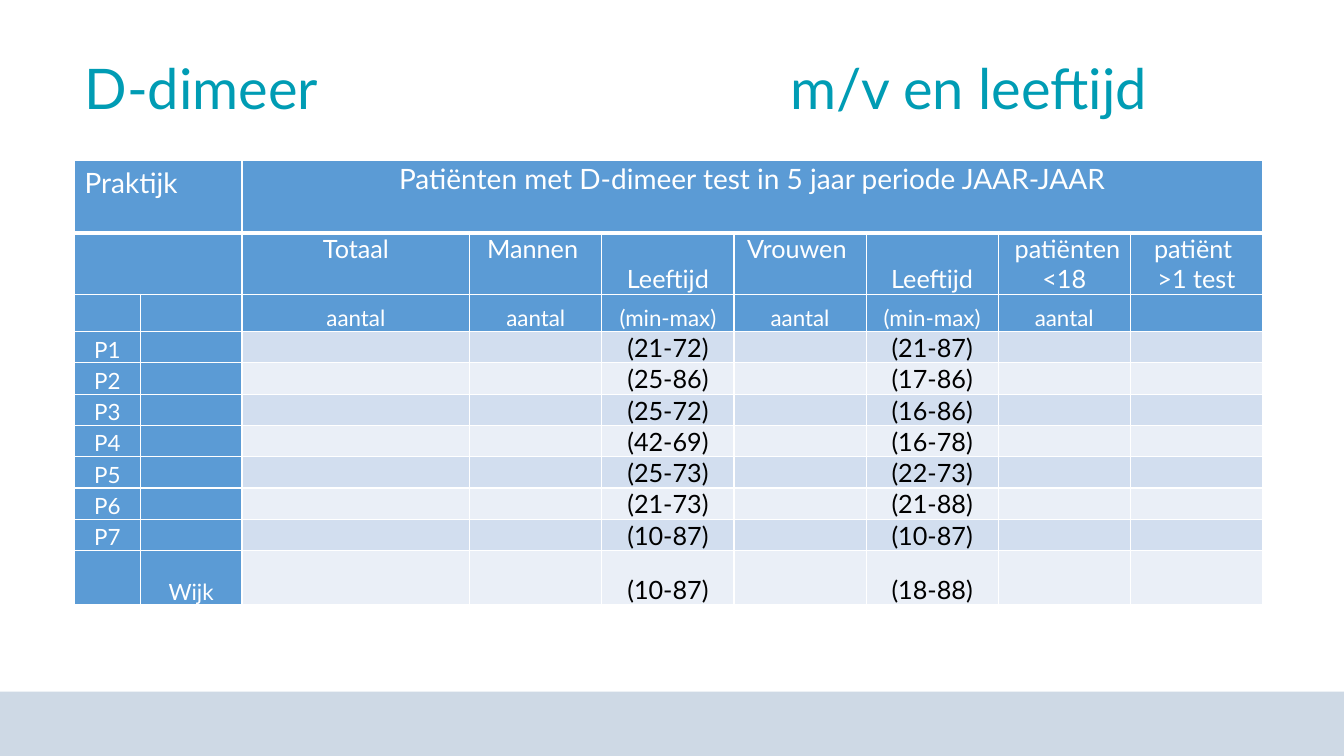
import dataclasses

import lxml.etree
import pptx
import pptx.dml.color
import pptx.enum.shapes
import pptx.enum.text
import pptx.oxml.ns
import pptx.util

Align = pptx.enum.text.PP_ALIGN
Anchor = pptx.enum.text.MSO_ANCHOR
qn = pptx.oxml.ns.qn


@dataclasses.dataclass(frozen=True)
class Theme:
    font: str = "Lato"
    title: str = "009CB4"
    footer: str = "CED9E5"
    head: str = "5B9BD5"
    bands: tuple[str, str] = ("D2DEEF", "EAEFF7")
    light: str = "FFFFFF"
    dark: str = "000000"
    huge: int = 40
    large: int = 20
    body: int = 18
    small: int = 16
    thin: int = 1
    thick: int = 3


@dataclasses.dataclass(frozen=True)
class Box:
    """A frame in percent of the slide's width and height."""
    left: float
    top: float
    width: float
    height: float


@dataclasses.dataclass(frozen=True)
class Row:
    height: float
    texts: tuple[str, ...]
    size: int
    anchor: Anchor = Anchor.BOTTOM


THEME = Theme()
WIDTH, HEIGHT = pptx.util.Inches(13.33), pptx.util.Inches(7.5)
FOOTER = Box(0, 91.47, 100, 8.53)
TITLE = Box(5.55, 6.4, 89.4, 14.8)
TABLE = Box(5.55, 21.2, 88.3, 58.8)
COLS = (4.88, 7.58, 16.95) + (9.83,) * 6
HEADS = 3
MERGES = (((0, 0), (0, 1)), ((0, 2), (0, 8)), ((1, 0), (1, 1)))
MEN, WOMEN = 4, 6
AGES = (
    ("P1", "", "(21-72)", "(21-87)"),
    ("P2", "", "(25-86)", "(17-86)"),
    ("P3", "", "(25-72)", "(16-86)"),
    ("P4", "", "(42-69)", "(16-78)"),
    ("P5", "", "(25-73)", "(22-73)"),
    ("P6", "", "(21-73)", "(21-88)"),
    ("P7", "", "(10-87)", "(10-87)"),
    ("", "Wijk", "(10-87)", "(18-88)"),
)
TOPS = (
    Row(9.6, ("Praktijk", "", "Patiënten met D-dimeer test in 5 jaar periode JAAR-JAAR")
        + ("",) * 6, THEME.large, Anchor.TOP),
    Row(8.13, ("", "", "Totaal", "Mannen ", "Leeftijd", "Vrouwen ", "Leeftijd",
               " patiënten <18", "patiënt \n>1 test"), THEME.body, Anchor.TOP),
    Row(4.93, ("", "", "aantal", "aantal", "(min-max)", "aantal", "(min-max)",
               "aantal", ""), THEME.small),
)


def across(share: float) -> int:
    return round(WIDTH * share / 100)


def down(share: float) -> int:
    return round(HEIGHT * share / 100)


def place(box: Box) -> tuple[int, int, int, int]:
    return across(box.left), down(box.top), across(box.width), down(box.height)


def paint(fill, color: str) -> None:
    fill.solid()
    fill.fore_color.rgb = pptx.dml.color.RGBColor.from_string(color)


def write(para, text: str, size: int, color: str) -> None:
    run = para.add_run()
    run.text = text
    run.font.name = THEME.font
    run.font.size = pptx.util.Pt(size)
    run.font.color.rgb = pptx.dml.color.RGBColor.from_string(color)


def rule(cell, row: int) -> None:
    """Draw the cell's white borders, thick between the first two rows."""
    props = cell._tc.get_or_add_tcPr()
    thick = {"T": row == 1, "B": row == 0}
    for spot, side in enumerate("LRTB"):
        width = THEME.thick if thick.get(side) else THEME.thin
        line = lxml.etree.Element(qn(f"a:ln{side}"), w=str(pptx.util.Pt(width)))
        fill = lxml.etree.SubElement(line, qn("a:solidFill"))
        lxml.etree.SubElement(fill, qn("a:srgbClr"), val=THEME.light)
        props.insert(spot, line)


def fill_cell(cell, text: str, row: int, col: int, line: Row) -> None:
    label = row < HEADS or col < 2
    paint(cell.fill, THEME.head if label else THEME.bands[(row - HEADS) % 2])
    rule(cell, row)
    cell.vertical_anchor = line.anchor
    if (row, col) != (0, 0):
        edge = pptx.util.Inches(0.01)
        cell.margin_left = cell.margin_right = cell.margin_top = edge
        cell.margin_bottom = 0
    if row == 1 and col in (MEN, WOMEN):
        cell.vertical_anchor = Anchor.BOTTOM
    size = THEME.small if row >= HEADS and label else line.size
    frame = cell.text_frame
    if not text:
        lxml.etree.SubElement(frame.paragraphs[0]._p, qn("a:endParaRPr"),
                              sz=str(THEME.small * 100))
        return
    for order, part in enumerate(text.split("\n")):
        para = frame.add_paragraph() if order else frame.paragraphs[0]
        para.alignment = Align.LEFT if (row, col) == (0, 0) else Align.CENTER
        write(para, part, size, THEME.light if label else THEME.dark)


def age_row(code: str, area: str, men: str, women: str) -> Row:
    texts = (code, area, "", "", men, "", women, "", "")
    return Row(7.2 if area else 4.13, texts, THEME.body)


def add_grid(slide) -> None:
    rows = TOPS + tuple(age_row(*ages) for ages in AGES)
    table = slide.shapes.add_table(len(rows), len(COLS), *place(TABLE)).table
    table.first_row = table.horz_banding = False
    for col, share in enumerate(COLS):
        table.columns[col].width = across(share)
    for row, line in enumerate(rows):
        table.rows[row].height = down(line.height)
        for col, text in enumerate(line.texts):
            fill_cell(table.cell(row, col), text, row, col, line)
    for start, end in MERGES:
        table.cell(*start).merge(table.cell(*end))


def add_footer(slide) -> None:
    kind = pptx.enum.shapes.MSO_SHAPE.RECTANGLE
    band = slide.shapes.add_shape(kind, *place(FOOTER))
    band.shadow.inherit = False
    paint(band.fill, THEME.footer)
    band.line.fill.background()


def add_title(slide) -> None:
    frame = slide.shapes.add_textbox(*place(TITLE)).text_frame
    frame.word_wrap = True
    para = frame.paragraphs[0]
    tabs = lxml.etree.SubElement(para._p.get_or_add_pPr(), qn("a:tabLst"))
    lxml.etree.SubElement(tabs, qn("a:tab"), pos=str(pptx.util.Inches(7)), algn="l")
    write(para, "D-dimeer\tm/v en leeftijd", THEME.huge, THEME.title)


def main() -> None:
    deck = pptx.Presentation()
    deck.slide_width, deck.slide_height = WIDTH, HEIGHT
    slide = deck.slides.add_slide(deck.slide_layouts[6])
    add_footer(slide)
    add_grid(slide)
    add_title(slide)
    deck.save("out.pptx")


if __name__ == "__main__":
    main()
